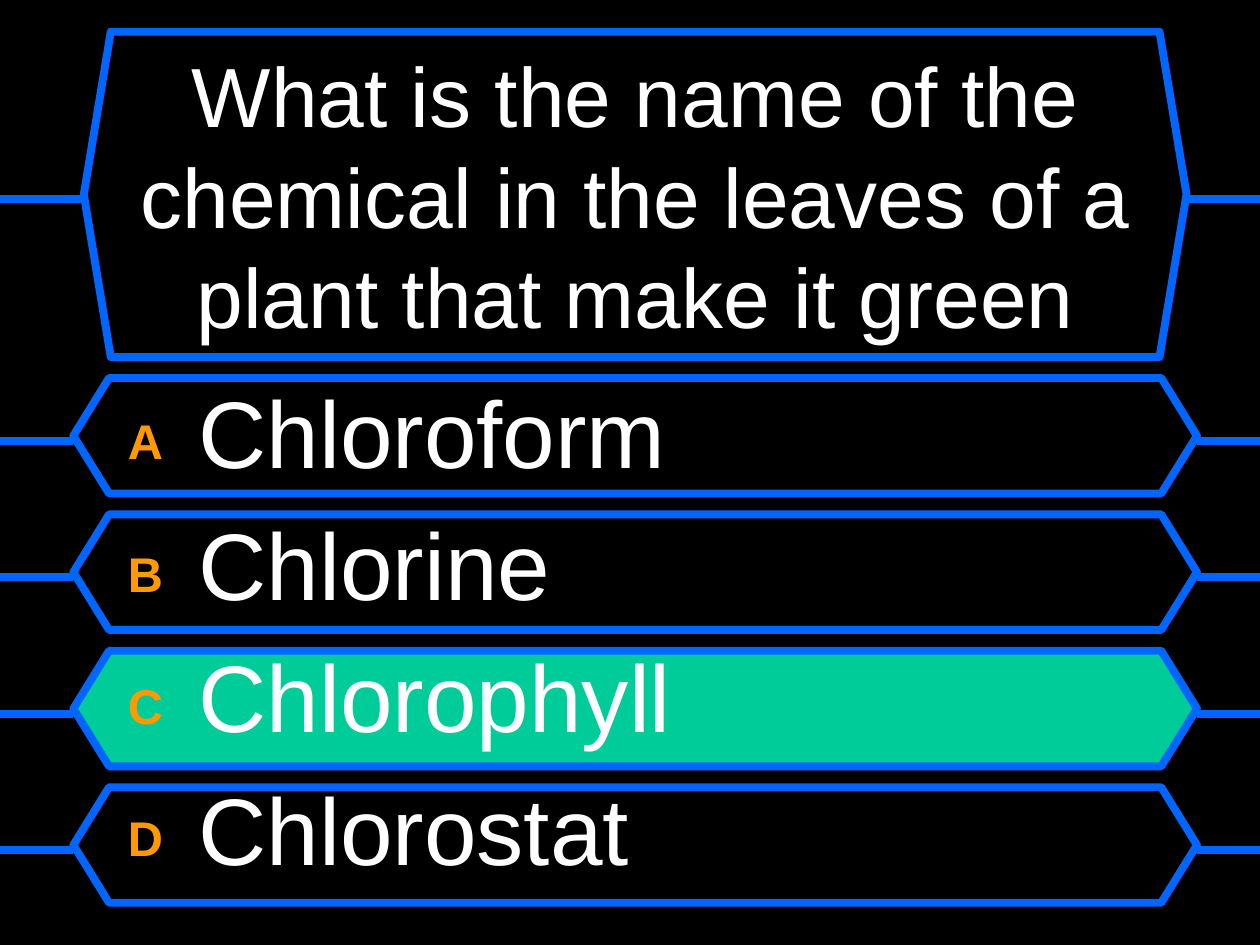
from pptx import Presentation, util as u
from pptx.dml.color import RGBColor
from pptx.enum import shapes, text
from pptx.oxml.ns import qn
from lxml import etree

COLORS = {"back": "000000", "edge": "0066FF", "correct": "00CC99",
          "letter": "FF9900", "words": "FFFFFF"}
WIDTH, HEIGHT = 25.4, 19.05
QUESTION = "What is the name of the chemical in the leaves of a plant that make it green"
ANSWERS = {"A": "Chloroform", "B": "Chlorine", "C": "Chlorophyll", "D": "Chlorostat"}
CORRECT = "C"


def color(name):
    return RGBColor.from_string(COLORS[name])


def add_span(para, words, *, size, fill="words", bold=False, raised=0):
    span = para.add_run()
    span.text = words
    span.font.name = "Arial"
    span.font.size = u.Pt(size)
    span.font.bold = bold
    span.font.color.rgb = color(fill)
    if raised:
        span._r.get_or_add_rPr().set("baseline", str(raised * 1000))


class QuizSlide:
    def __init__(self, deck):
        self.page = deck.slides.add_slide(deck.slide_layouts[5])
        self.page.background.fill.solid()
        self.page.background.fill.fore_color.rgb = color("back")
        self.edge_width = u.Pt(4.5)

    def outline(self, item):
        item.line.color.rgb = color("edge")
        item.line.width = self.edge_width

    def panel(self, left, top, width, height, slant, fill="back"):
        hexagon = self.page.shapes.add_shape(
            shapes.MSO_SHAPE.HEXAGON, u.Cm(left), u.Cm(top), u.Cm(width), u.Cm(height))
        hexagon.adjustments[0] = slant
        hexagon.shadow.inherit = False
        hexagon.fill.solid()
        hexagon.fill.fore_color.rgb = color(fill)
        self.outline(hexagon)

    def rails(self, left, right, y):
        for start, end in ((left, 0), (WIDTH, right)):
            rail = self.page.shapes.add_connector(
                shapes.MSO_CONNECTOR.STRAIGHT, u.Cm(start), u.Cm(y), u.Cm(end), u.Cm(y))
            self.outline(rail)
            etree.SubElement(rail.element.spPr, qn("a:effectLst"))

    def question(self, words, left, top, width, height):
        title = self.page.shapes.title
        title.left, title.top = u.Cm(left), u.Cm(top)
        title.width, title.height = u.Cm(width), u.Cm(height)
        title.element.getparent().append(title.element)
        frame = title.text_frame
        frame.word_wrap = True
        frame.auto_size = text.MSO_AUTO_SIZE.NONE
        frame.vertical_anchor = text.MSO_ANCHOR.MIDDLE
        para = frame.paragraphs[0]
        para.alignment = text.PP_ALIGN.CENTER
        add_span(para, words, size=48)

    def answers(self, choices, left, top, width, height):
        box = self.page.shapes.add_textbox(u.Cm(left), u.Cm(top), u.Cm(width), u.Cm(height))
        frame = box.text_frame
        frame.word_wrap = True
        for index, (letter, words) in enumerate(choices.items()):
            para = frame.add_paragraph() if index else frame.paragraphs[0]
            para.space_before = u.Pt(10.8)
            indent = u.Cm(1.42)
            properties = para._p.get_or_add_pPr()
            properties.set("marL", str(indent))
            properties.set("indent", str(-indent))
            add_span(para, letter, size=48, fill="letter", bold=True, raised=10)
            add_span(para, "\t" + words, size=54)


def main():
    deck = Presentation()
    deck.slide_width, deck.slide_height = u.Cm(WIDTH), u.Cm(HEIGHT)
    quiz = QuizSlide(deck)

    quiz.panel(1.69, 0.64, 22.23, 6.56, 0.083)
    quiz.rails(1.69, 23.92, 4.02)
    for index, letter in enumerate(ANSWERS):
        top = 7.62 + 2.75 * index
        quiz.panel(1.48, top, 22.65, 2.33, 0.309, "correct" if letter == CORRECT else "back")
        quiz.rails(1.48, 24.13, top + 1.27)

    quiz.question(QUESTION, 2.12, 1.06, 21.38, 5.72)
    quiz.answers(ANSWERS, 2.33, 7.41, 21.17, 11)
    deck.save("out.pptx")


if __name__ == "__main__":
    main()
